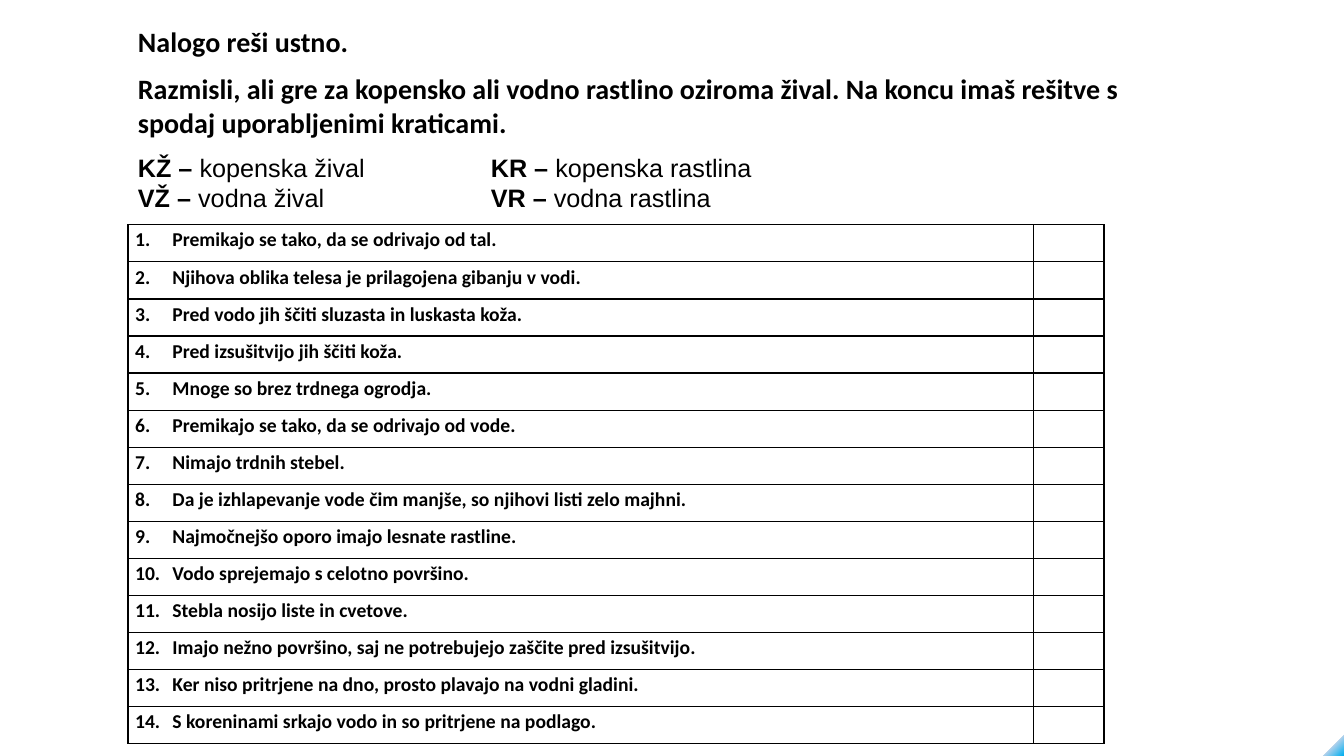
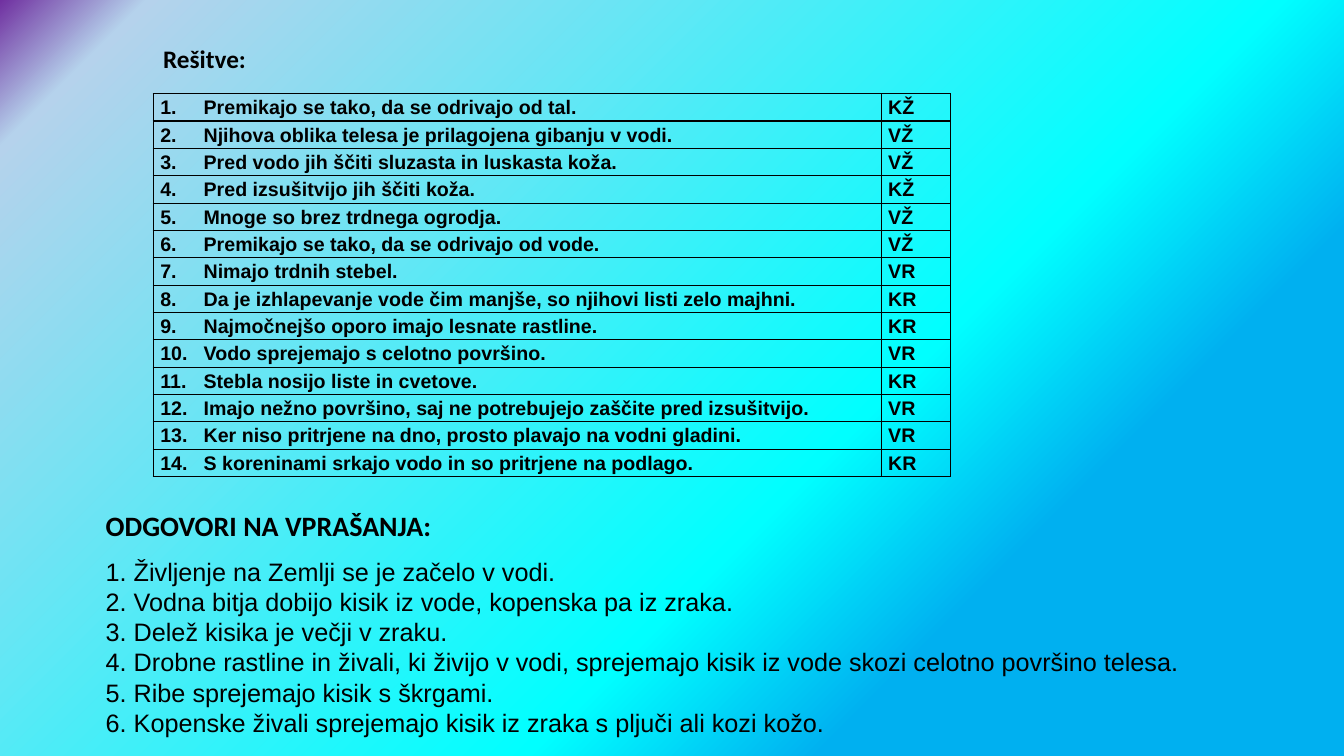
from lxml.etree import SubElement
from pptx import Presentation
from pptx.dml.color import RGBColor
from pptx.enum.text import MSO_ANCHOR
from pptx.oxml import parse_xml
from pptx.oxml.ns import nsdecls, qn
from pptx.util import Inches, Pt

COLORS = {"ink": "000000", "white": "FFFFFF", "violet": "7030A0",
          "pale": "B5D2EC", "cyan": "00FFFF", "blue": "00B0F0"}
HEAD, BODY = "Calibri", "Arial"
GAP = 9.5

CLAIMS = [
    ("Premikajo se tako, da se odrivajo od tal.", "KŽ"),
    ("Njihova oblika telesa je prilagojena gibanju v vodi.", "VŽ"),
    ("Pred vodo jih ščiti sluzasta in luskasta koža.", "VŽ"),
    ("Pred izsušitvijo jih ščiti koža.", "KŽ"),
    ("Mnoge so brez trdnega ogrodja.", "VŽ"),
    ("Premikajo se tako, da se odrivajo od vode.", "VŽ"),
    ("Nimajo trdnih stebel.", "VR"),
    ("Da je izhlapevanje vode čim manjše, so njihovi listi zelo majhni.", "KR"),
    ("Najmočnejšo oporo imajo lesnate rastline.", "KR"),
    ("Vodo sprejemajo s celotno površino.", "VR"),
    ("Stebla nosijo liste in cvetove.", "KR"),
    ("Imajo nežno površino, saj ne potrebujejo zaščite pred izsušitvijo.", "VR"),
    ("Ker niso pritrjene na dno, prosto plavajo na vodni gladini.", "VR"),
    ("S koreninami srkajo vodo in so pritrjene na podlago.", "KR"),
]
LEGEND = [
    [("KŽ", "kopenska žival"), ("KR", "kopenska rastlina")],
    [("VŽ", "vodna žival"), ("VR", "vodna rastlina")],
]
ANSWERS = [
    "Življenje na Zemlji se je začelo v vodi.",
    "Vodna bitja dobijo kisik iz vode, kopenska pa iz zraka.",
    "Delež kisika je večji v zraku.",
    "Drobne rastline in živali, ki živijo v vodi, sprejemajo kisik iz vode "
    "skozi celotno površino telesa.",
    "Ribe sprejemajo kisik s škrgami.",
    "Kopenske živali sprejemajo kisik iz zraka s pljuči ali kozi kožo.",
]


def paint(slide, stops):
    """Fill the background with a diagonal gradient of (percent, colour) stops."""
    fill = slide.background.fill
    fill.gradient()
    fill.gradient_angle = 315
    track = slide.element.find(".//" + qn("a:gsLst"))
    for stop in list(track):
        track.remove(stop)
    for spot, name in stops:
        stop = SubElement(track, qn("a:gs"), pos=str(spot * 1000))
        SubElement(stop, qn("a:srgbClr"), val=COLORS[name])


def style(par, size, face, bold=False):
    font = par.font
    font.size, font.name, font.bold = Pt(size), face, bold
    font.color.rgb = RGBColor.from_string(COLORS["ink"])


def add_tab(par, spot):
    tabs = parse_xml(f'<a:tabLst {nsdecls("a")}>'
                     f'<a:tab pos="{Inches(spot)}" algn="l"/></a:tabLst>')
    props = par._p.get_or_add_pPr()
    mark = props.find(qn("a:defRPr"))
    if mark is None:
        props.append(tabs)
    else:
        mark.addprevious(tabs)


def add_text(slide, box, text, size, wrap=True):
    """Place a text box that opens with a bold heading; return its frame."""
    frame = slide.shapes.add_textbox(*map(Inches, box)).text_frame
    frame.word_wrap = wrap
    par = frame.paragraphs[0]
    par.text = text
    style(par, size, HEAD, True)
    return frame


def add_line(frame, first):
    par = frame.add_paragraph()
    style(par, 18, BODY)
    if first:
        par.space_before = Pt(GAP)
    return par


def add_legend(frame):
    for row, pairs in enumerate(LEGEND):
        par = add_line(frame, row == 0)
        add_tab(par, 3.5)
        for col, (code, label) in enumerate(pairs):
            run = par.add_run()
            run.text = "\t" * col + code + " – "
            run.font.bold = True
            par.add_run().text = label


def add_answers(frame):
    for num, text in enumerate(ANSWERS, 1):
        add_line(frame, num == 1).text = f"{num}. {text}"


def fill_cell(cell, text, face):
    cell.margin_left = cell.margin_right = Inches(0.07)
    cell.margin_top = cell.margin_bottom = 0
    cell.fill.background()
    par = cell.text_frame.paragraphs[0]
    par.text = text
    par.line_spacing = 1.15
    style(par, 14, face, True)
    props = cell._tc.get_or_add_tcPr()
    for spot, side in enumerate(("lnL", "lnR", "lnT", "lnB")):
        props.insert(spot, parse_xml(
            f'<a:{side} {nsdecls("a")} w="{Pt(1)}"><a:solidFill>'
            f'<a:srgbClr val="{COLORS["ink"]}"/></a:solidFill></a:{side}>'))


def add_claims(slide, box, last, face, tab, solved):
    """Draw the numbered claims; the last column holds the codes if solved."""
    grid = slide.shapes.add_table(len(CLAIMS), 2, *map(Inches, box)).table
    grid.first_row = grid.horz_banding = False
    grid.columns[0].width = Inches(box[2] - last)
    grid.columns[1].width = Inches(last)
    for row, (claim, code) in enumerate(CLAIMS):
        grid.rows[row].height = Inches(box[3] / len(CLAIMS))
        cell = grid.cell(row, 0)
        fill_cell(cell, f"{row + 1}.\t{claim}", face)
        add_tab(cell.text_frame.paragraphs[0], tab)
        fill_cell(grid.cell(row, 1), code if solved else "", face)


def build_task(slide):
    paint(slide, [(99, "white"), (99, "pale"), (100, "blue"), (100, "cyan")])
    title = add_text(slide, (1.27, 0, 10.75, 0.81), "Nalogo reši ustno.", 20)
    title.vertical_anchor = MSO_ANCHOR.MIDDLE
    frame = add_text(
        slide, (1.27, 0.66, 10, 1.5),
        "Razmisli, ali gre za kopensko ali vodno rastlino oziroma žival. "
        "Na koncu imaš rešitve s spodaj uporabljenimi kraticami.", 20)
    add_legend(frame)
    add_claims(slide, (1.27, 2.23, 9.68, 5.15), 0.7, HEAD, 0.37, False)


def build_key(slide):
    paint(slide, [(0, "violet"), (7, "pale"), (61, "cyan"), (75, "blue")])
    add_text(slide, (1.52, 0.38, 1.09, 0.4), "Rešitve:", 18, wrap=False)
    add_claims(slide, (1.52, 0.93, 7.91, 3.8), 0.69, BODY, 0.43, True)
    frame = add_text(slide, (0.95, 5, 10.91, 2.39),
                     "ODGOVORI NA VPRAŠANJA:", 20)
    add_answers(frame)


def main():
    deck = Presentation()
    deck.slide_width, deck.slide_height = Inches(13.33), Inches(7.5)
    for build in (build_task, build_key):
        build(deck.slides.add_slide(deck.slide_layouts[6]))
    deck.save("out.pptx")


if __name__ == "__main__":
    main()
